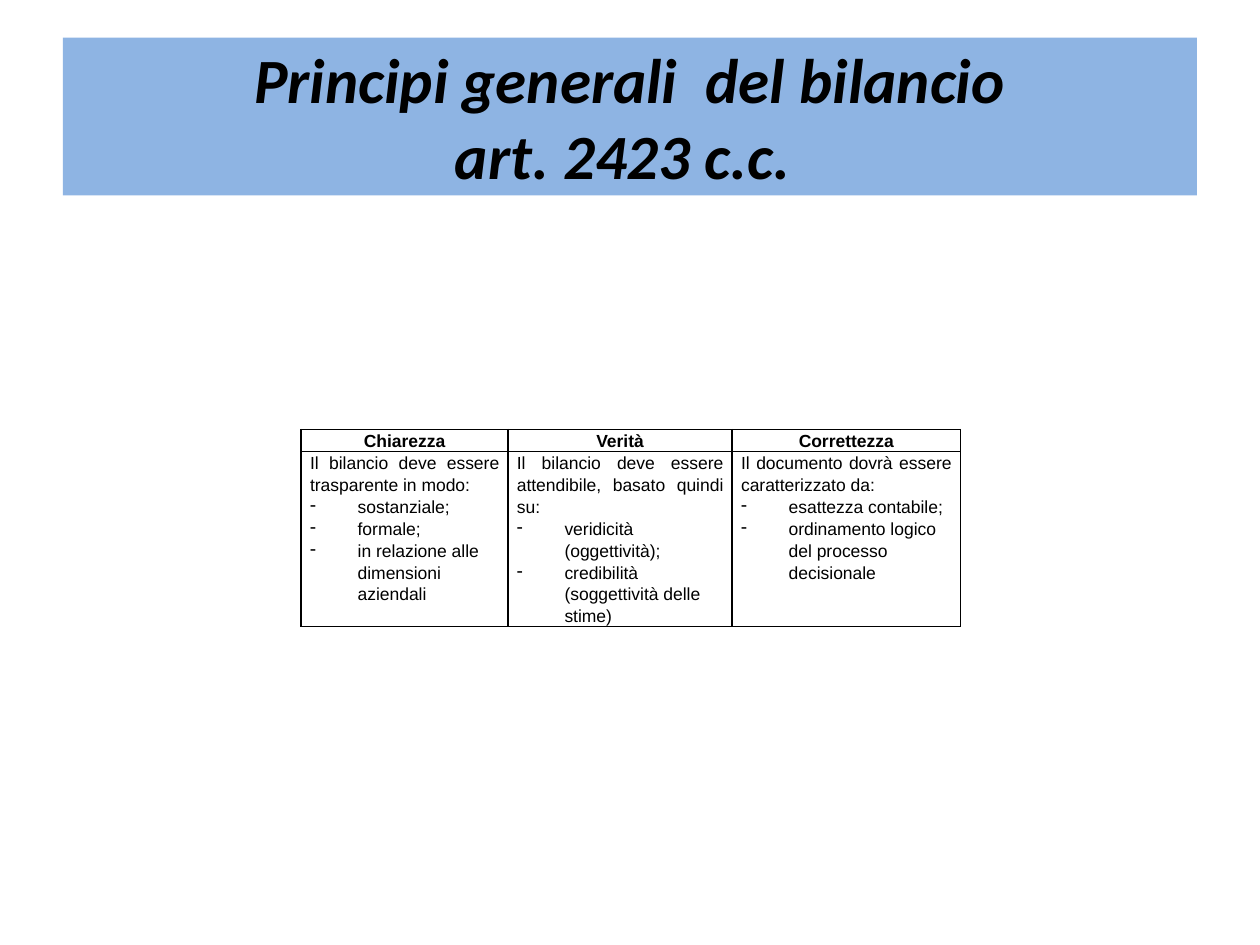
from lxml.etree import SubElement
from pptx import Presentation
from pptx.dml.color import RGBColor
from pptx.enum.shapes import MSO_SHAPE
from pptx.enum.text import MSO_ANCHOR, PP_ALIGN
from pptx.oxml import parse_xml
from pptx.oxml.ns import nsdecls, qn
from pptx.util import Cm, Pt

COLOURS = {"banner": "8EB4E3", "ink": "000000"}

PRINCIPLES = {
    "Chiarezza": (
        "Il bilancio deve essere trasparente in modo: ",
        ["sostanziale;", "formale;", "in relazione alle dimensioni aziendali"],
    ),
    "Verità": (
        "Il bilancio deve essere attendibile, basato quindi su: ",
        ["veridicità (oggettività);", "credibilità (soggettività delle stime)"],
    ),
    "Correttezza": (
        "Il documento dovrà essere caratterizzato da: ",
        ["esattezza contabile;", "ordinamento logico del processo decisionale"],
    ),
}
COLUMN_WIDTHS = [4.17, 4.52, 4.6]
ROW_HEIGHTS = [0.44, 3.53]


class SlideBuilder:
    title_font, table_font = "Calibri", "Arial"
    title_size, table_size = Pt(36), Pt(10)
    line_spacing, border_width = Pt(12.5), Pt(1)
    cell_margin, bullet_indent = Cm(0.18), Cm(0.96)

    def __init__(self, slide):
        self.slide = slide

    def format_runs(self, paragraph, font, size, bold=False, italic=False):
        for run in paragraph.runs:
            run.font.name, run.font.size = font, size
            run.font.bold, run.font.italic = bold, italic
            run.font.color.rgb = RGBColor.from_string(COLOURS["ink"])

    def title(self, text, left, top, width, height):
        banner = self.slide.shapes.add_shape(
            MSO_SHAPE.RECTANGLE, Cm(left), Cm(top), Cm(width), Cm(height))
        banner.shadow.inherit = False
        banner.fill.solid()
        banner.fill.fore_color.rgb = RGBColor.from_string(COLOURS["banner"])
        banner.line.fill.background()
        frame = banner.text_frame
        frame.word_wrap = True
        frame.vertical_anchor = MSO_ANCHOR.MIDDLE
        frame.text = text
        heading = frame.paragraphs[0]
        heading.alignment = PP_ALIGN.CENTER
        self.format_runs(heading, self.title_font, self.title_size, True, True)

    def borders(self, cell):
        properties = cell._tc.get_or_add_tcPr()
        for position, side in enumerate(("lnL", "lnR", "lnT", "lnB")):
            properties.insert(position, parse_xml(
                f'<a:{side} {nsdecls("a")} w="{self.border_width}"><a:solidFill>'
                f'<a:srgbClr val="{COLOURS["ink"]}"/></a:solidFill></a:{side}>'))

    def bullet(self, paragraph):
        """Give the paragraph a hanging dash."""
        properties = paragraph._p.get_or_add_pPr()
        properties.set("marL", str(self.bullet_indent))
        properties.set("indent", str(-self.bullet_indent))
        SubElement(properties, qn("a:buChar")).set("char", "-")

    def cell(self, cell, lead, alignment, bold=False, points=()):
        """Fill a cell with a lead paragraph and bulleted points below it."""
        cell.margin_left = cell.margin_right = self.cell_margin
        cell.margin_top = cell.margin_bottom = 0
        cell.fill.background()
        self.borders(cell)
        cell.text_frame.text = "\n".join([lead, *points])
        for index, paragraph in enumerate(cell.text_frame.paragraphs):
            paragraph.alignment = PP_ALIGN.LEFT if index else alignment
            paragraph.line_spacing = self.line_spacing
            if index:
                self.bullet(paragraph)
            self.format_runs(paragraph, self.table_font, self.table_size, bold)

    def table(self, columns, left, top, widths, heights):
        table = self.slide.shapes.add_table(
            len(heights), len(widths), Cm(left), Cm(top),
            Cm(sum(widths)), Cm(sum(heights))).table
        table.first_row = table.horz_banding = False
        for row, height in zip(table.rows, heights):
            row.height = Cm(height)
        for index, (heading, (lead, points)) in enumerate(columns.items()):
            table.columns[index].width = Cm(widths[index])
            self.cell(table.cell(0, index), heading, PP_ALIGN.CENTER, bold=True)
            self.cell(table.cell(1, index), lead, PP_ALIGN.JUSTIFY, points=points)


def main():
    presentation = Presentation()
    presentation.slide_width, presentation.slide_height = Cm(25.4), Cm(19.05)
    builder = SlideBuilder(
        presentation.slides.add_slide(presentation.slide_layouts[6]))
    builder.title("Principi generali  del bilancio\vart. 2423 c.c. ",
                  1.27, 0.76, 22.86, 3.18)
    builder.table(PRINCIPLES, 6.07, 8.66, COLUMN_WIDTHS, ROW_HEIGHTS)
    presentation.save("out.pptx")


if __name__ == "__main__":
    main()
